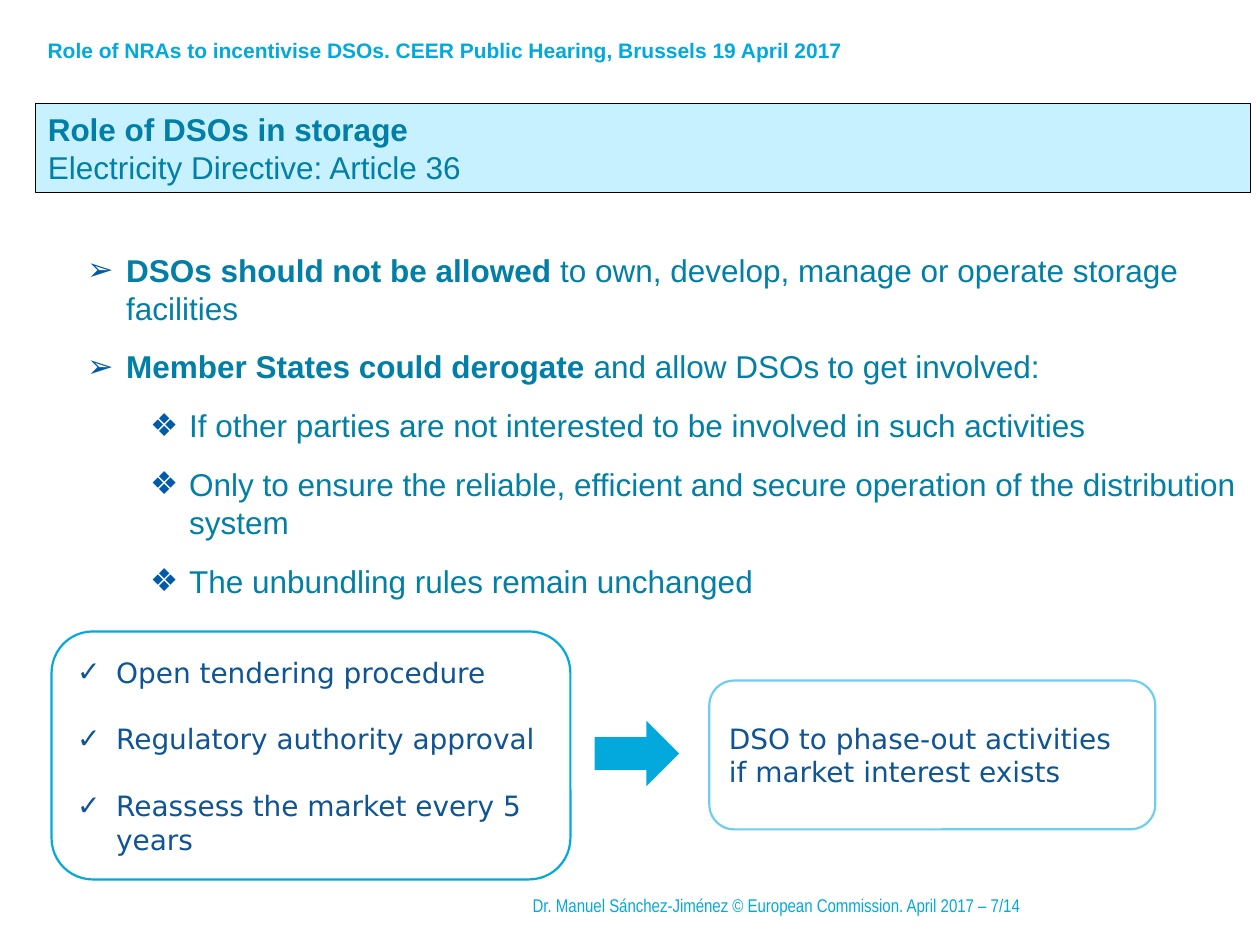
from lxml import etree
from pptx import Presentation
from pptx import util as u
from pptx.dml.color import RGBColor
from pptx.enum import shapes, text
from pptx.oxml.ns import qn

# Theme: colours, fonts and type sizes
THEME = {
    "cyan": "03A9DD", "teal": "027FA6", "pale": "C7F1FE", "black": "000000",
    "blue": "005BAB", "navy": "0F5494",
    "main": "Arial", "slim": "Arial Narrow", "box": "DejaVu Sans",
    "head": 12, "foot": 10.5, "body": 18, "note": 16,
}

# Content: each paragraph is a list of (words, bold) runs
HEADER = [("Role of NRAs to incentivise DSOs. CEER Public Hearing, Brussels 19 April 2017", True)]
FOOTER = [("Dr. Manuel Sánchez-Jiménez © European Commission. April 2017 – 7/14", False)]
TITLE = [
    [("Role of DSOs in storage", True)],
    [("Electricity Directive: Article 36", False)],
]
BODY = [  # level, runs
    (0, [("DSOs should not be allowed", True),
         (" to own, develop, manage or operate storage facilities", False)]),
    (0, [("Member States could derogate", True),
         (" and allow DSOs to get involved:", False)]),
    (1, [("If other parties are not interested to be involved in such activities", False)]),
    (1, [("Only to ensure the reliable, efficient and secure operation of the "
          "distribution system", False)]),
    (1, [("The unbundling rules remain unchanged", False)]),
]
STEPS = ["Open tendering procedure", "Regulatory authority approval",
         "Reassess the market every 5 years"]
RESULT = ["DSO to phase-out activities if market interest exists"]

# Places in cm: left, top, width, height
PLACES = {
    "header": (0.71, 0.64, 23.19, 0.76),
    "footer": (10.49, 17.73, 10.8, 1.02),
    "title": (0.71, 2.08, 24.49, 1.8),
    "body": (1.5, 4.93, 23.67, 7.34),
    "steps": (1.04, 12.73, 10.46, 5),
    "arrow": (11.99, 14.53, 1.7, 1.32),
    "result": (14.3, 13.72, 8.99, 3),
}
MARKS = [("➢", 0.79), ("❖", 2.06)]  # bullet and text indent by level
HANG = 0.79


def place(name):
    return [u.Cm(v) for v in PLACES[name]]


def tint(name):
    return RGBColor.from_string(THEME[name])


def write(para, runs, font, size, color):
    para.alignment = text.PP_ALIGN.LEFT
    for words, bold in runs:
        run = para.add_run()
        run.text = words
        run.font.name = THEME[font]
        run.font.size = u.Pt(THEME[size])
        run.font.bold = bold
        run.font.color.rgb = tint(color)


def mark(para, char, left, color):
    props = para._p.get_or_add_pPr()
    props.set("marL", str(u.Cm(left)))
    props.set("indent", str(-u.Cm(HANG)))
    hue = etree.SubElement(props, qn("a:buClr"))
    etree.SubElement(hue, qn("a:srgbClr"), val=THEME[color])
    etree.SubElement(props, qn("a:buFont"), typeface=THEME["main"])
    etree.SubElement(props, qn("a:buChar"), char=char)


def space(para, before, after=0):
    para.space_before = u.Pt(before)
    para.space_after = u.Pt(after)


def setup(frame, anchor):
    frame.word_wrap = True
    frame.auto_size = text.MSO_AUTO_SIZE.NONE
    frame.vertical_anchor = anchor
    return frame


def paras(frame, items):
    """Pair each item with its paragraph, adding those that are missing."""
    for i, item in enumerate(items):
        yield i, item, frame.add_paragraph() if i else frame.paragraphs[0]


def label(slide, name, runs, font, size, anchor):
    box = slide.shapes.add_textbox(*place(name))
    write(setup(box.text_frame, anchor).paragraphs[0], runs, font, size, "cyan")


def note(slide, name, lines, char=None, alpha=None):
    box = slide.shapes.add_shape(shapes.MSO_SHAPE.ROUNDED_RECTANGLE, *place(name))
    box.shadow.inherit = False
    box.fill.background()
    box.line.color.rgb = tint("cyan")
    box.line.width = u.Pt(1.25)
    if alpha:
        hue = box.line._ln.find(".//" + qn("a:srgbClr"))
        etree.SubElement(hue, qn("a:alpha"), val=str(alpha * 1000))
    frame = setup(box.text_frame, text.MSO_ANCHOR.MIDDLE)
    for i, line, para in paras(frame, lines):
        if char:
            mark(para, char, 0.81, "navy")
        space(para, 19 if i else 0)
        write(para, [(line, False)], "box", "note", "navy")


def main():
    deck = Presentation()
    deck.slide_width, deck.slide_height = u.Cm(25.4), u.Cm(19.05)
    slide = deck.slides.add_slide(deck.slide_layouts[1])
    top, mid = text.MSO_ANCHOR.TOP, text.MSO_ANCHOR.MIDDLE

    # Header and footer lines
    label(slide, "header", HEADER, "main", "head", top)
    label(slide, "footer", FOOTER, "slim", "foot", mid)

    # Title band
    title, body = slide.shapes.title, slide.placeholders[1]
    for holder, name in ((title, "title"), (body, "body")):
        holder.left, holder.top, holder.width, holder.height = place(name)
    title.fill.solid()
    title.fill.fore_color.rgb = tint("pale")
    title.line.color.rgb = tint("black")
    title.line.width = u.Pt(0.25)
    for _, runs, para in paras(setup(title.text_frame, mid), TITLE):
        space(para, 0)
        write(para, runs, "main", "body", "teal")

    # Bulleted list
    for i, (level, runs), para in paras(setup(body.text_frame, top), BODY):
        para.level = level
        mark(para, *MARKS[level], "blue")
        space(para, 6 if i else 0, 6)
        write(para, runs, "main", "body", "teal")

    # Conditions, arrow and outcome
    note(slide, "steps", STEPS, char="✓")
    note(slide, "result", RESULT, alpha=57)
    arrow = slide.shapes.add_shape(shapes.MSO_SHAPE.RIGHT_ARROW, *place("arrow"))
    arrow.shadow.inherit = False
    arrow.fill.solid()
    arrow.fill.fore_color.rgb = tint("cyan")
    arrow.line.fill.background()

    deck.save("out.pptx")


if __name__ == "__main__":
    main()
